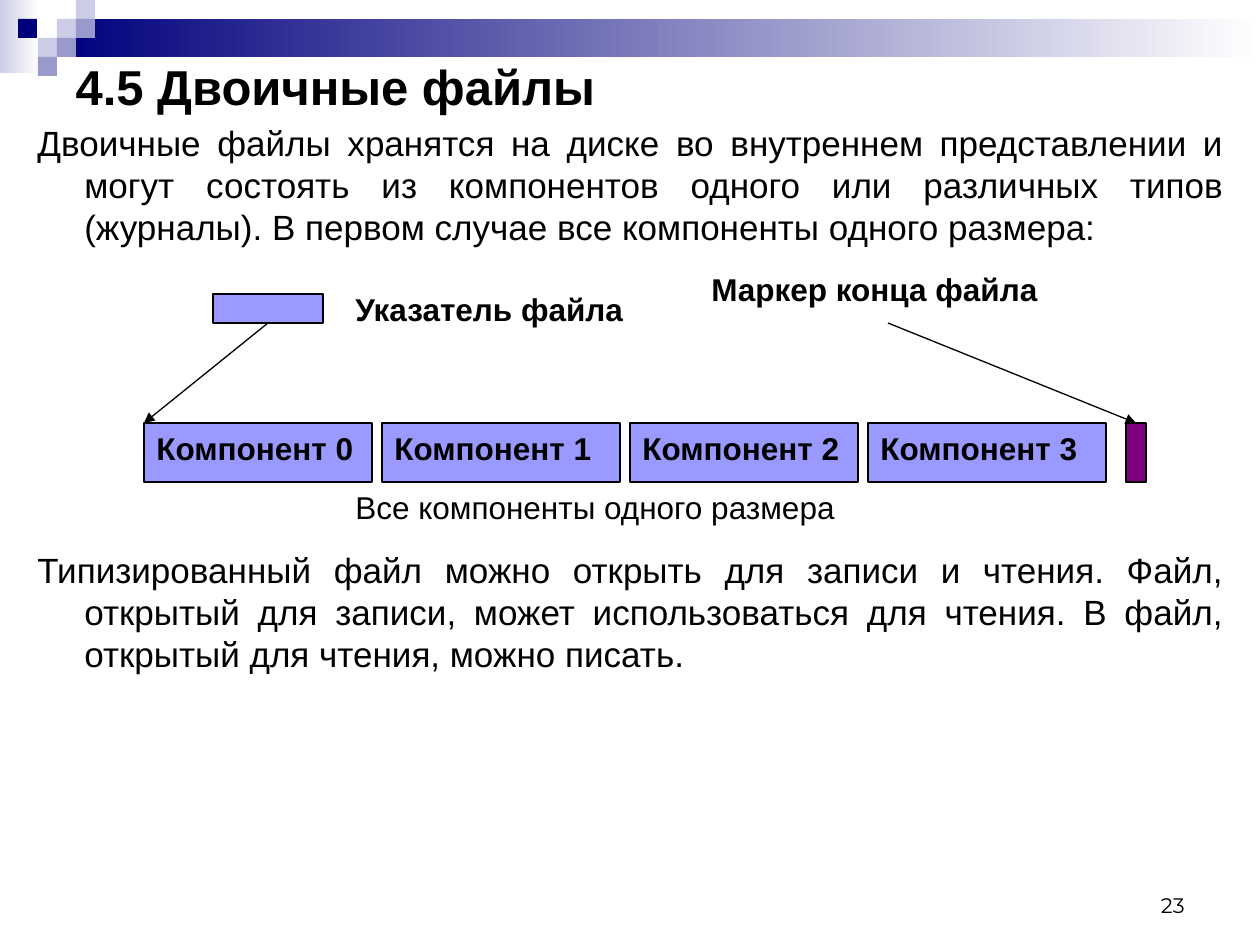
from lxml import etree
from pptx import Presentation
from pptx.dml.color import RGBColor
from pptx.enum.shapes import MSO_CONNECTOR, MSO_SHAPE
from pptx.enum.text import MSO_ANCHOR, PP_ALIGN
from pptx.oxml.ns import qn
from pptx.util import Pt

RECTANGLE = MSO_SHAPE.RECTANGLE
STRAIGHT = MSO_CONNECTOR.STRAIGHT
TOP, MIDDLE, BOTTOM = MSO_ANCHOR.TOP, MSO_ANCHOR.MIDDLE, MSO_ANCHOR.BOTTOM
LEFT, RIGHT, JUSTIFY = PP_ALIGN.LEFT, PP_ALIGN.RIGHT, PP_ALIGN.JUSTIFY
color = RGBColor.from_string


def px(*lengths):
    """Turn px (126 to the inch) into EMU."""
    return [round(length * 914400 / 126) for length in lengths]


def write(shape, texts, size, bold=False, font="Arial", align=LEFT, anchor=TOP, wrap=True):
    frame = shape.text_frame
    frame.word_wrap = wrap
    frame.vertical_anchor = anchor
    frame.text = "\n".join(texts)
    for paragraph in frame.paragraphs:
        paragraph.alignment = align
        paragraph.font.size = Pt(size)
        paragraph.font.bold = bold
        paragraph.font.name = font
        paragraph.font.color.rgb = color("000000")
    return frame


presentation = Presentation()
presentation.slide_width, presentation.slide_height = px(1260, 945)
slide = presentation.slides.add_slide(presentation.slide_layouts[5])
shapes = slide.shapes

# Header bands and mosaic
for box, start in [((0, 0, 39, 73), "CCCCE6"), ((57, 19, 1203, 38), "00007D")]:
    band = shapes.add_shape(RECTANGLE, *px(*box))
    band.shadow.inherit = False
    band.line.fill.background()
    band.fill.gradient()
    band.fill.gradient_angle = 0
    for stop, stop_color in zip(band.fill.gradient_stops, (start, "FFFFFF")):
        stop.color.rgb = color(stop_color)

for left, top, fill in [
    (57, 19, "CCCCE6"), (76, 0, "CCCCE6"), (76, 19, "9999CC"), (38, 38, "CCCCE6"),
    (18, 19, "00007D"), (57, 38, "9999CC"), (38, 57, "9999CC"),
]:
    tile = shapes.add_shape(RECTANGLE, *px(left, top, 19, 19))
    tile.shadow.inherit = False
    tile.line.fill.background()
    tile.fill.solid()
    tile.fill.fore_color.rgb = color(fill)

# Title, body and slide number
title = shapes.title
title.left, title.top, title.width, title.height = px(63, 56, 1134, 59)
write(title, ["4.5 Двоичные файлы"], 28, bold=True, anchor=MIDDLE)

body = shapes.add_textbox(*px(25, 115, 1211, 830))
body_frame = write(body, [
    "Двоичные файлы хранятся на диске во внутреннем представлении и могут состоять из "
    "компонентов одного или различных типов (журналы). В первом случае все компоненты "
    "одного размера:",
    "Типизированный файл можно открыть для записи и чтения. Файл, открытый для записи, "
    "может использоваться для чтения. В файл, открытый для чтения, можно писать.",
], 20, align=JUSTIFY)
for paragraph in body_frame.paragraphs:
    properties = paragraph._p.get_or_add_pPr()
    indent = px(47)[0]
    properties.set("marL", str(indent))
    properties.set("indent", str(-indent))
body_frame.paragraphs[1].space_before = Pt(172)

number = shapes.add_textbox(*px(903, 861, 294, 63))
write(number, ["23"], 12, font="Montserrat", align=RIGHT, anchor=BOTTOM)

# File pointer, components and end marker
blocks = []
for box, fill, label in [
    ((213, 294, 110, 29), "9999FF", ""),
    ((144, 423, 228, 59), "9999FF", "Компонент 0"),
    ((382, 423, 238, 59), "9999FF", "Компонент 1"),
    ((630, 423, 228, 59), "9999FF", "Компонент 2"),
    ((868, 423, 238, 59), "9999FF", "Компонент 3"),
    ((1126, 423, 20, 59), "800080", ""),
]:
    block = shapes.add_shape(RECTANGLE, *px(*box))
    block.shadow.inherit = False
    block.fill.solid()
    block.fill.fore_color.rgb = color(fill)
    block.line.color.rgb = color("000000")
    block.line.width = Pt(0.75)
    if label:
        write(block, [label], 18, bold=True, wrap=False)
    blocks.append(block)
file_pointer, end_marker = blocks[0], blocks[-1]

for box, label, bold in [
    ((343, 284, 328, 50), "Указатель файла", True),
    ((699, 264, 456, 50), "Маркер конца файла", True),
    ((343, 482, 530, 50), "Все компоненты одного размера", False),
]:
    write(shapes.add_textbox(*px(*box)), [label], 18, bold=bold)

pointer_arrow = shapes.add_connector(STRAIGHT, *px(268, 323, 144, 423))
pointer_arrow.begin_connect(file_pointer, 2)
marker_arrow = shapes.add_connector(STRAIGHT, *px(888, 323, 1136, 423))
marker_arrow.end_connect(end_marker, 0)
for arrow in (pointer_arrow, marker_arrow):
    arrow.line.color.rgb = color("000000")
    arrow.line.width = Pt(0.75)
    etree.SubElement(arrow.line._get_or_add_ln(), qn("a:tailEnd"), type="triangle")
    etree.SubElement(arrow._element.spPr, qn("a:effectLst"))

presentation.save("out.pptx")
